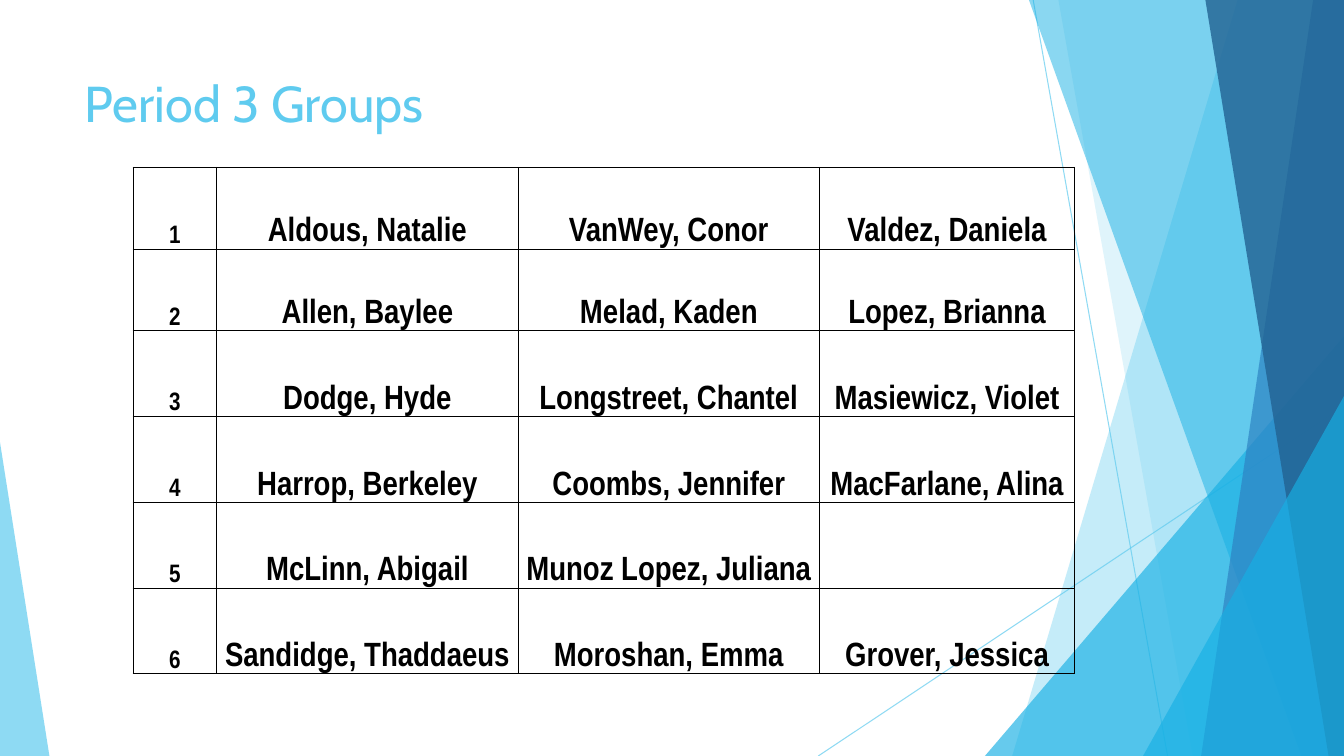
"""Build the Period 3 Groups slide with its faceted blue backdrop."""
from dataclasses import dataclass

from pptx import Presentation
from pptx.dml.color import RGBColor
from pptx.enum.shapes import MSO_CONNECTOR, MSO_SHAPE
from pptx.enum.text import MSO_ANCHOR, PP_ALIGN
from pptx.oxml import parse_xml
from pptx.oxml.ns import nsdecls, qn
from pptx.util import Pt


@dataclass(frozen=True)
class Theme:
    """Colours, fonts and type sizes of the slide."""
    sky: str = "5FCBEF"
    cyan: str = "17B0E4"
    blue: str = "2E83C3"
    navy: str = "226292"
    ink: str = "000000"
    title_font: str = "Cabin"
    table_font: str = "Arial Narrow"
    title_size: int = 36
    name_size: int = 24
    number_size: int = 18
    hairline: float = 0.75
    border: float = 0.5


class GroupSlide:
    """Hold the theme and the current slide, and draw each kind of element."""

    def __init__(self, deck, theme):
        self.theme = theme
        self.width = deck.slide_width.pt
        self.height = deck.slide_height.pt
        self.slide = deck.slides.add_slide(deck.slide_layouts[5])

    def fade(self, shape, opacity):
        for color in shape._element.spPr.iter(qn("a:srgbClr")):
            color.append(parse_xml(f'<a:alpha {nsdecls("a")} val="{opacity * 1000}"/>'))

    def paint(self, shape, color, opacity):
        shape.shadow.inherit = False
        shape.fill.solid()
        shape.fill.fore_color.rgb = RGBColor.from_string(color)
        shape.line.fill.background()
        self.fade(shape, opacity)

    def ray(self, x1, y1, x2, y2):
        ray = self.slide.shapes.add_connector(
            MSO_CONNECTOR.STRAIGHT, Pt(x1), Pt(y1), Pt(x2), Pt(y2))
        ray.line.width = Pt(self.theme.hairline)
        ray.line.color.rgb = RGBColor.from_string(self.theme.sky)
        self.fade(ray, 70)
        ray._element.spPr.append(parse_xml(f'<a:effectLst {nsdecls("a")}/>'))

    def band(self, top_x, bottom_x, color, opacity):
        outline = self.slide.shapes.build_freeform(Pt(top_x), 0)
        outline.add_line_segments([
            (Pt(self.width), 0), (Pt(self.width), Pt(self.height)),
            (Pt(bottom_x), Pt(self.height))])
        self.paint(outline.convert_to_shape(), color, opacity)

    def corner(self, left, top, width, apex, color, opacity):
        corner = self.slide.shapes.add_shape(
            MSO_SHAPE.ISOSCELES_TRIANGLE,
            Pt(left), Pt(top), Pt(width), Pt(self.height - top))
        corner.adjustments[0] = apex
        self.paint(corner, color, opacity)

    def add_text(self, paragraph, text, font, size, color, bold=False):
        run = paragraph.add_run()
        run.text = text
        run.font.name = font
        run.font.size = Pt(size)
        run.font.bold = bold
        run.font.color.rgb = RGBColor.from_string(color)

    def title(self, text, left, top, width, height):
        title = self.slide.shapes.title
        title.left, title.top = Pt(left), Pt(top)
        title.width, title.height = Pt(width), Pt(height)
        title.text_frame.vertical_anchor = MSO_ANCHOR.TOP
        heading = title.text_frame.paragraphs[0]
        heading.alignment = PP_ALIGN.LEFT
        self.add_text(heading, text, self.theme.title_font,
                      self.theme.title_size, self.theme.sky)

    def frame(self, cell):
        cell.fill.background()
        properties = cell._tc.get_or_add_tcPr()
        for index, side in enumerate(("lnL", "lnR", "lnT", "lnB")):
            properties.insert(index, parse_xml(
                f'<a:{side} {nsdecls("a")} w="{Pt(self.theme.border)}"><a:solidFill>'
                f'<a:srgbClr val="{self.theme.ink}"/></a:solidFill></a:{side}>'))

    def table(self, rows, left, top, widths, heights):
        table = self.slide.shapes.add_table(
            len(rows), len(widths), Pt(left), Pt(top),
            Pt(sum(widths)), Pt(sum(heights))).table
        table.first_row = table.horz_banding = False
        for column, width in zip(table.columns, widths):
            column.width = Pt(width)
        for row, height, texts in zip(table.rows, heights, rows):
            row.height = Pt(height)
            for index, (cell, text) in enumerate(zip(row.cells, texts)):
                self.frame(cell)
                cell.vertical_anchor = MSO_ANCHOR.BOTTOM
                cell.margin_left = cell.margin_right = cell.margin_top = Pt(0.7)
                cell.margin_bottom = 0
                entry = cell.text_frame.paragraphs[0]
                entry.alignment = PP_ALIGN.CENTER
                if text:
                    size = self.theme.name_size if index else self.theme.number_size
                    self.add_text(entry, text, self.theme.table_font, size,
                                  self.theme.ink, bold=True)


def main():
    deck = Presentation()
    deck.slide_width, deck.slide_height = Pt(960), Pt(540)
    theme = Theme()
    page = GroupSlide(deck, theme)

    page.ray(738, 0, 834, 540)
    page.ray(960, 290, 584.5, 540)
    page.band(884, 723, theme.sky, 36)
    page.band(756, 852, theme.sky, 20)
    page.corner(703.5, 240, 256.5, 1, theme.cyan, 66)
    page.band(735, 929.5, theme.cyan, 50)
    page.band(938, 858, theme.blue, 70)
    page.band(861, 949, theme.navy, 80)
    page.corner(816.5, 283, 143.5, 1, theme.cyan, 66)
    page.corner(0, 316, 35.3, 0, theme.sky, 70)

    page.title("Period 3 Groups", 53.3, 48, 677, 104)
    groups = [
        ("Aldous, Natalie", "VanWey, Conor", "Valdez, Daniela"),
        ("Allen, Baylee", "Melad, Kaden", "Lopez, Brianna"),
        ("Dodge, Hyde", "Longstreet, Chantel", "Masiewicz, Violet"),
        ("Harrop, Berkeley", "Coombs, Jennifer", "MacFarlane, Alina"),
        ("McLinn, Abigail", "Munoz Lopez, Juliana", ""),
        ("Sandidge, Thaddaeus", "Moroshan, Emma", "Grover, Jessica"),
    ]
    rows = [(str(number), *names) for number, names in enumerate(groups, 1)]
    page.table(rows, 95, 119.5, [59.8, 215.3, 215.3, 182.2],
               [58.3] * 2 + [61.3] * 4)
    deck.save("out.pptx")


if __name__ == "__main__":
    main()
